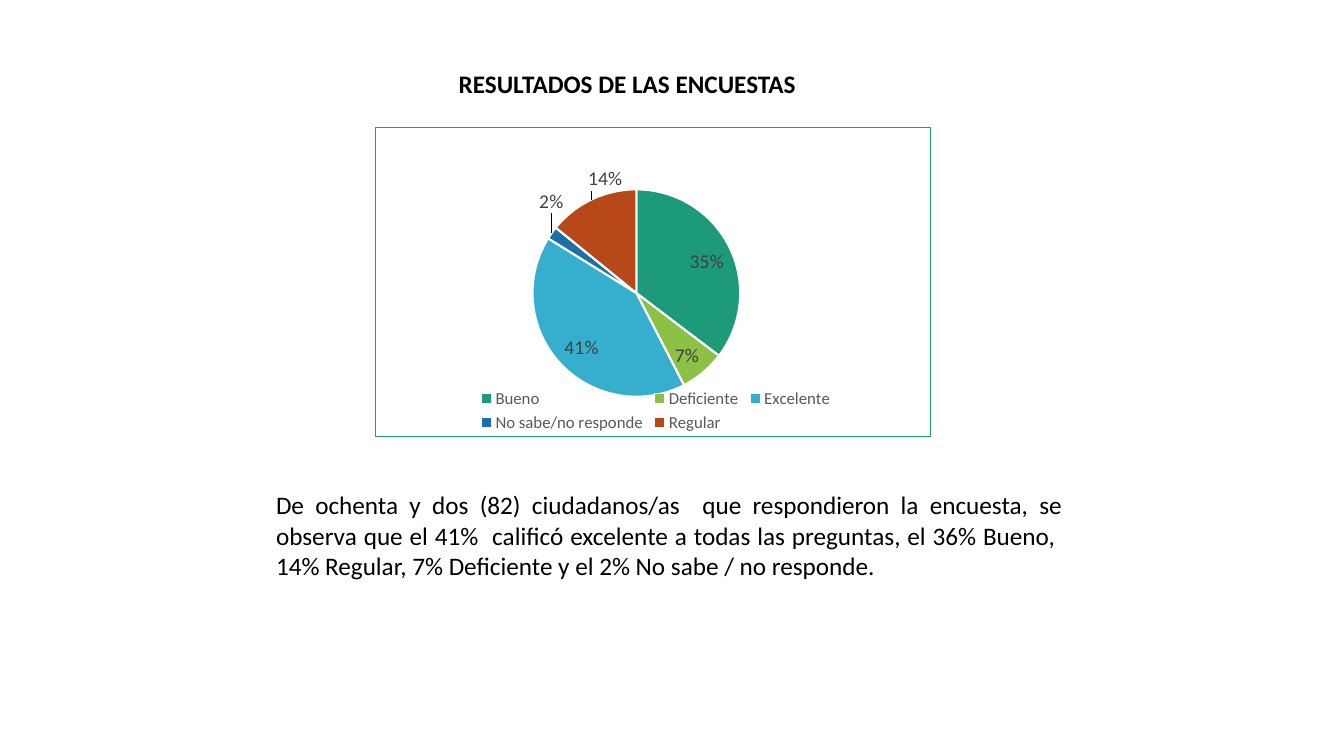
from lxml.etree import SubElement
from pptx import Presentation
from pptx.chart.data import CategoryChartData
from pptx.dml.color import RGBColor
from pptx.enum.chart import XL_CHART_TYPE as ChartType
from pptx.enum.chart import XL_LABEL_POSITION as LabelPosition
from pptx.enum.chart import XL_LEGEND_POSITION as LegendPosition
from pptx.enum.text import MSO_ANCHOR as Anchor
from pptx.enum.text import PP_ALIGN as Align
from pptx.oxml import parse_xml
from pptx.oxml.ns import nsdecls, qn
from pptx.util import Pt

BLACK = RGBColor(0x00, 0x00, 0x00)
WHITE = RGBColor(0xFF, 0xFF, 0xFF)
LABEL_GRAY = RGBColor(0x40, 0x40, 0x40)
LEGEND_GRAY = RGBColor(0x59, 0x59, 0x59)
TEAL = RGBColor(0x1D, 0x9A, 0x78)
GREEN = RGBColor(0x8B, 0xC1, 0x45)
CYAN = RGBColor(0x36, 0xAF, 0xCE)
BLUE = RGBColor(0x1D, 0x6F, 0xA9)
RUST = RGBColor(0xB7, 0x49, 0x19)

RATINGS = [
    ("Bueno", 35, TEAL),
    ("Deficiente", 7, GREEN),
    ("Excelente", 41, CYAN),
    ("No sabe/no responde", 2, BLUE),
    ("Regular", 14, RUST),
]
OUTSIDE_LABELS = {3: {"x": 0.03, "y": -0.05}, 4: {"x": 0.06, "y": -0.01}}
PLOT_LAYOUT = {"layoutTarget": "inner", "xMode": "edge", "yMode": "edge",
               "x": 0.06, "y": 0.2, "w": 0.82, "h": 0.67}
LEGEND_LAYOUT = {"xMode": "edge", "yMode": "edge",
                 "x": 0.18, "y": 0.83, "w": 0.65, "h": 0.17}

TITLE = "RESULTADOS DE LAS ENCUESTAS"
SUMMARY = (
    "De ochenta y dos (82) ciudadanos/as  que respondieron la encuesta, se "
    "observa que el 41%  calificó excelente a todas las preguntas, el 36% Bueno,  "
    "14% Regular, 7% Deficiente y el 2% No sabe / no responde."
)


def apply_format(target, values):
    for name, value in values.items():
        setattr(target, name, value)


def format_font(font, size, color, bold=False):
    apply_format(font, {"name": "Calibri", "size": Pt(size), "bold": bold})
    font.color.rgb = color


def set_layout(element, values, predecessor):
    for existing in element.findall(qn("c:layout")):
        element.remove(existing)
    layout = parse_xml(f"<c:layout {nsdecls('c')}/>")
    manual = SubElement(layout, qn("c:manualLayout"))
    for name, value in values.items():
        SubElement(manual, qn(f"c:{name}")).set("val", str(value))
    if predecessor is None:
        element.insert(0, layout)
    else:
        element.find(qn(predecessor)).addnext(layout)


def fill_text(shape, text, align, wrap, bold=False):
    frame = shape.text_frame
    apply_format(frame, {"text": text, "word_wrap": wrap,
                         "vertical_anchor": Anchor.TOP})
    paragraph = frame.paragraphs[0]
    paragraph.alignment = align
    format_font(paragraph.runs[0].font, 18, BLACK, bold)


def add_title(slide, left, top, width, height):
    title = slide.shapes.title
    apply_format(title, {"left": Pt(left), "top": Pt(top),
                         "width": Pt(width), "height": Pt(height)})
    fill_text(title, TITLE, Align.LEFT, False, bold=True)


def add_summary(slide, left, top, width, height):
    box = slide.shapes.add_textbox(Pt(left), Pt(top), Pt(width), Pt(height))
    fill_text(box, SUMMARY, Align.JUSTIFY, True)


def format_slices(series):
    for index, (_, _, color) in enumerate(RATINGS):
        slice_format = series.points[index].format
        slice_format.fill.solid()
        slice_format.fill.fore_color.rgb = color
        slice_format.line.color.rgb = WHITE
        slice_format.line.width = Pt(1.5)


def format_labels(series):
    labels = series.data_labels
    apply_format(labels, {"show_percentage": True, "show_value": False,
                          "number_format": "0%", "number_format_is_linked": False,
                          "position": LabelPosition.INSIDE_END})
    format_font(labels.font, 14, LABEL_GRAY)
    for index in OUTSIDE_LABELS:
        label = series.points[index].data_label
        format_font(label.font, 14, LABEL_GRAY)
        label.position = LabelPosition.OUTSIDE_END
    for element in labels._element.findall(qn("c:dLbl")):
        index = int(element.find(qn("c:idx")).get("val"))
        set_layout(element, OUTSIDE_LABELS[index], "c:idx")
        element.find(qn("c:showVal")).set("val", "0")
        element.find(qn("c:showPercent")).set("val", "1")


def add_ratings_chart(slide, left, top, width, height):
    data = CategoryChartData()
    data.categories = [name for name, _, _ in RATINGS]
    data.add_series("Series 1", [value for _, value, _ in RATINGS])
    chart = slide.shapes.add_chart(
        ChartType.PIE, Pt(left), Pt(top), Pt(width), Pt(height), data).chart
    apply_format(chart, {"has_title": False, "has_legend": True})
    format_font(chart.font, 10, BLACK)

    plot = chart.plots[0]
    plot.vary_by_categories = True
    format_slices(plot.series[0])
    format_labels(plot.series[0])

    apply_format(chart.legend, {"position": LegendPosition.BOTTOM,
                                "include_in_layout": False})
    format_font(chart.legend.font, 12, LEGEND_GRAY)
    chart_space = chart._chartSpace
    set_layout(chart_space.find(f".//{qn('c:legend')}"), LEGEND_LAYOUT, "c:legendPos")
    set_layout(chart_space.find(f".//{qn('c:plotArea')}"), PLOT_LAYOUT, None)
    chart_space.find(qn("c:chart")).addnext(parse_xml(
        f'<c:spPr {nsdecls("c", "a")}><a:noFill/><a:ln w="{Pt(0.75)}">'
        f'<a:solidFill><a:srgbClr val="{TEAL}"/></a:solidFill></a:ln></c:spPr>'))


def build_survey_slide(presentation):
    slide = presentation.slides.add_slide(presentation.slide_layouts[5])
    add_title(slide, 320.4, 45.4, 257.8, 28.8)
    add_ratings_chart(slide, 267.8, 90.7, 397.4, 221.8)
    add_summary(slide, 190.1, 346.3, 576, 72.7)


def main():
    presentation = Presentation()
    apply_format(presentation, {"slide_width": Pt(960), "slide_height": Pt(540)})
    build_survey_slide(presentation)
    presentation.save("out.pptx")


if __name__ == "__main__":
    main()
